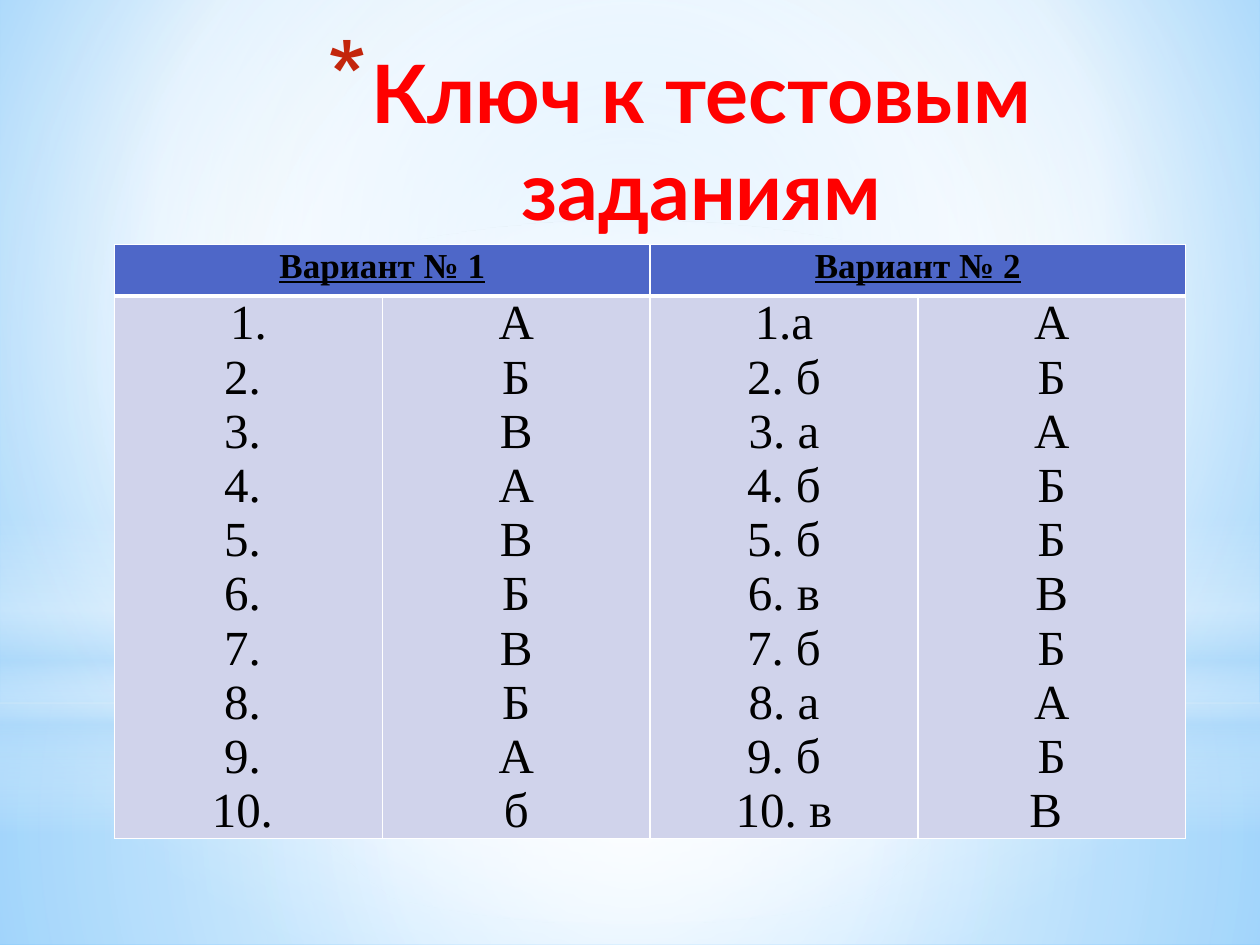
from dataclasses import dataclass

from lxml import etree
from pptx import Presentation
from pptx.dml.color import RGBColor
from pptx.enum.shapes import MSO_SHAPE
from pptx.enum.text import MSO_ANCHOR, MSO_AUTO_SIZE, PP_ALIGN
from pptx.oxml import parse_xml
from pptx.oxml.ns import nsdecls, qn
from pptx.util import Inches, Pt

RECTANGLE, OVAL = MSO_SHAPE.RECTANGLE, MSO_SHAPE.OVAL
CENTER, TOP, NO_FIT = PP_ALIGN.CENTER, MSO_ANCHOR.TOP, MSO_AUTO_SIZE.NONE


@dataclass(frozen=True)
class Theme:
    title: str = "FF0000"
    bullet: str = "C3260C"
    text: str = "000000"
    header: str = "4E67C8"
    body: str = "D0D3EB"
    white: str = "FFFFFF"
    haze: str = "B4DCFA"
    sky: str = "9ED5FF"
    deep_sky: str = "5BB9FF"
    title_font: str = "Lato"
    table_font: str = "Times New Roman"
    title_size: int = 46
    header_size: int = 20
    body_size: int = 28


theme = Theme()


def write(text_frame, text, *, font, size, color, bold=False, underline=False,
          line_spacing=None, space_after=None):
    """Write each line of text as a centred paragraph."""
    text_frame.text = text
    for paragraph in text_frame.paragraphs:
        paragraph.alignment = CENTER
        paragraph.line_spacing = line_spacing
        paragraph.space_after = space_after
        for run in paragraph.runs:
            run.font.name = font
            run.font.size = Pt(size)
            run.font.bold = bold
            run.font.underline = underline
            run.font.color.rgb = RGBColor.from_string(color)


def set_gradient(properties, stops, focus=None):
    """Swap the solid fill for a radial gradient, or a vertical one without focus."""
    stop_xml = "".join(
        f'<a:gs pos="{position * 1000}"><a:srgbClr val="{color}">'
        f'<a:alpha val="{opacity * 1000}"/></a:srgbClr></a:gs>'
        for position, color, opacity in stops)
    direction = '<a:lin ang="5400000" scaled="0"/>'
    if focus:
        left, top, right, bottom = (side * 1000 for side in focus)
        direction = (f'<a:path path="circle"><a:fillToRect l="{left}" t="{top}" '
                     f'r="{right}" b="{bottom}"/></a:path>')
    gradient = parse_xml(f'<a:gradFill {nsdecls("a")} rotWithShape="1">'
                         f'<a:gsLst>{stop_xml}</a:gsLst>{direction}</a:gradFill>')
    properties.replace(properties.find(qn("a:solidFill")), gradient)


presentation = Presentation()
presentation.slide_width = Inches(10)
presentation.slide_height = Inches(7.5)
slide = presentation.slides.add_slide(presentation.slide_layouts[5])

# Background
slide.background.fill.solid()
set_gradient(slide.element.find(".//" + qn("p:bgPr")),
             [(0, theme.sky, 100), (60, theme.white, 100), (100, theme.deep_sky, 100)],
             focus=(20, 10, 20, 60))

# Translucent layers of light
middle = (50, 50, 50, 50)
layers = [
    (RECTANGLE, 5.58, 1.92, middle,
     [(0, theme.white, 91), (37, theme.white, 76), (100, theme.haze, 79)]),
    (RECTANGLE, 0, 5.58, middle,
     [(0, theme.white, 89), (48, theme.white, 62), (100, theme.haze, 79)]),
    (RECTANGLE, 4.12, 2.5, None,
     [(0, theme.white, 0), (29, theme.white, 30), (45, theme.haze, 40),
      (55, theme.white, 26), (65, theme.haze, 60), (100, theme.white, 0)]),
    (OVAL, 1.75, 5.58, middle, [(0, theme.white, 100), (56, theme.white, 0)]),
]
for kind, top, height, focus, stops in layers:
    shape = slide.shapes.add_shape(kind, 0, Inches(top), Inches(10), Inches(height))
    shape.shadow.inherit = False
    shape.line.fill.background()
    shape.fill.solid()
    set_gradient(shape.element.spPr, stops, focus)

# Title, brought in front of the layers
title = slide.shapes.title
title.element.getparent().append(title.element)
title.left, title.top = Inches(1.14), Inches(0.29)
title.width, title.height = Inches(8.5), Inches(1.81)
title.text_frame.auto_size = NO_FIT
title.text_frame.vertical_anchor = TOP
write(title.text_frame, "Ключ к тестовым заданиям", font=theme.title_font,
      size=theme.title_size, color=theme.title, bold=True)

# Title bullet
title_format = title.text_frame.paragraphs[0]._p.get_or_add_pPr()
title_format.set("marL", str(Inches(0.35)))
title_format.set("indent", str(Inches(-0.35)))
bullet_color = etree.SubElement(title_format, qn("a:buClr"))
etree.SubElement(bullet_color, qn("a:srgbClr"), val=theme.bullet)
etree.SubElement(title_format, qn("a:buSzPct"), val="128000")
etree.SubElement(title_format, qn("a:buChar"), char="*")

# Answer key table
headers = ["Вариант № 1", "Вариант № 2"]
answers = [
    ["1.", *(f"{number}. " for number in range(2, 11))],
    "АБВАВБВБАб",
    ["1.а", *(f"{number}. {letter}" for number, letter in enumerate("баббвбабв", 2))],
    [*"АБАББВБАБ", "В "],
]
table = slide.shapes.add_table(2, 4, Inches(0.91), Inches(1.94),
                               Inches(8.5), Inches(4.7)).table
table.rows[0].height, table.rows[1].height = Inches(0.41), Inches(4.29)
for index, header in enumerate(headers):
    cell = table.cell(0, index * 2)
    cell.merge(table.cell(0, index * 2 + 1))
    write(cell.text_frame, header, font=theme.table_font, size=theme.header_size,
          color=theme.text, bold=True, underline=True,
          line_spacing=1.07, space_after=Pt(8))
for column, lines in enumerate(answers):
    write(table.cell(1, column).text_frame, "\n".join(lines), font=theme.table_font,
          size=theme.body_size, color=theme.text)

# Cell fills, margins and borders, with a thick rule under the header
for row, (fill, top_width, bottom_width) in enumerate(
        [(theme.header, 1, 3), (theme.body, 3, 1)]):
    for cell in table.rows[row].cells:
        cell.fill.solid()
        cell.fill.fore_color.rgb = RGBColor.from_string(fill)
        cell.margin_left = cell.margin_right = Inches(0.07)
        cell.margin_top = cell.margin_bottom = 0
        borders = [("lnL", 1), ("lnR", 1), ("lnT", top_width), ("lnB", bottom_width)]
        for position, (side, width) in enumerate(borders):
            cell._tc.tcPr.insert(position, parse_xml(
                f'<a:{side} {nsdecls("a")} w="{Pt(width)}"><a:solidFill>'
                f'<a:srgbClr val="{theme.white}"/></a:solidFill></a:{side}>'))

presentation.save("out.pptx")
